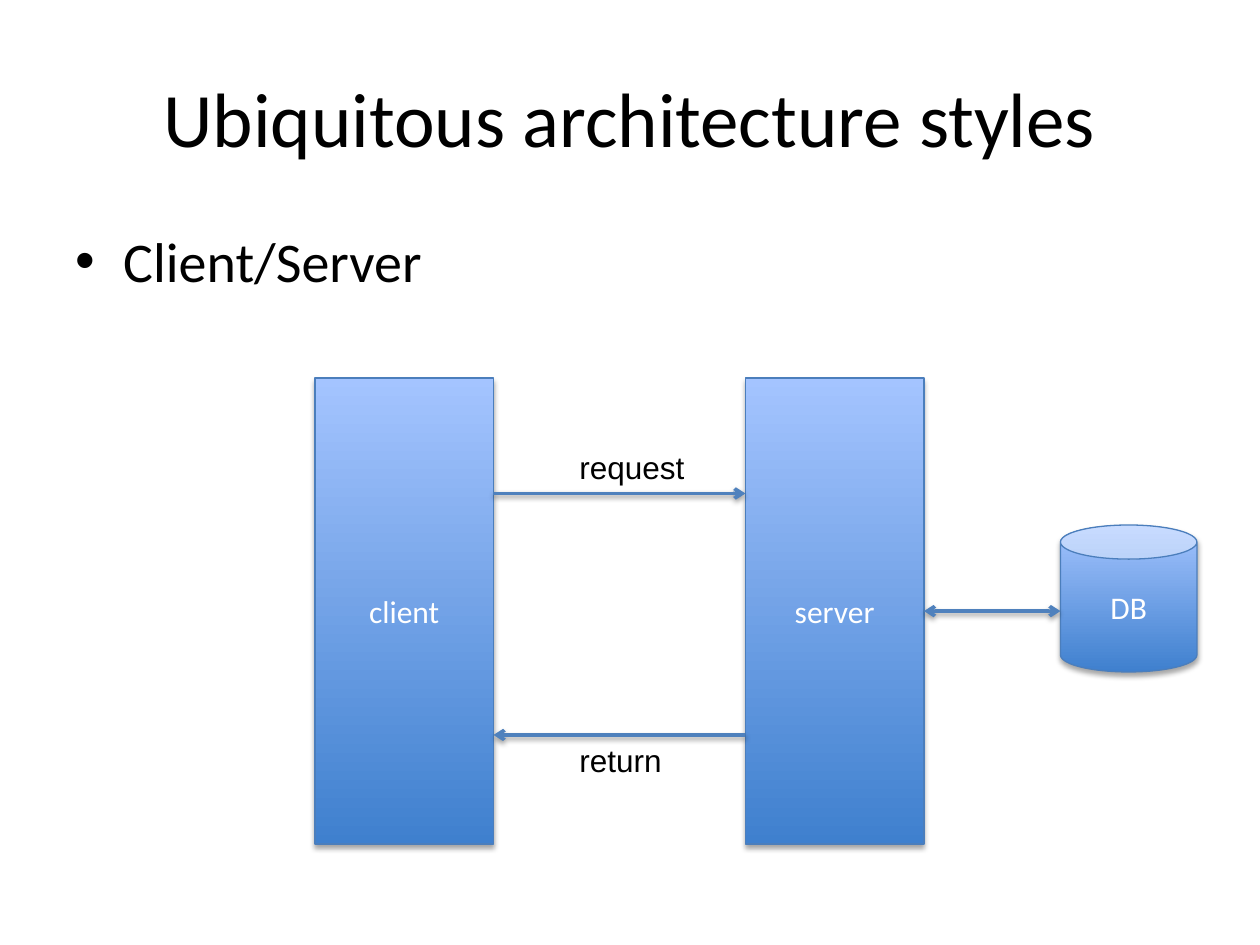
from dataclasses import dataclass

from lxml.etree import SubElement
from pptx import Presentation
from pptx.dml.color import RGBColor as RGB
from pptx.enum.shapes import MSO_CONNECTOR as CONNECTOR, MSO_SHAPE as SHAPE
from pptx.enum.text import MSO_ANCHOR as ANCHOR, MSO_AUTO_SIZE as AUTO_SIZE, PP_ALIGN as ALIGN
from pptx.oxml.ns import qn
from pptx.util import Inches, Pt


@dataclass(frozen=True)
class Theme:
    text: RGB = RGB(0x00, 0x00, 0x00)
    node_text: RGB = RGB(0xFF, 0xFF, 0xFF)
    node_bottom: RGB = RGB(0x3F, 0x80, 0xCE)
    node_top: RGB = RGB(0xA4, 0xC4, 0xFF)
    node_line: RGB = RGB(0x4B, 0x7E, 0xBC)
    arrow: RGB = RGB(0x4F, 0x81, 0xBD)
    font: str = "Calibri"
    label_font: str = "Arial"
    title_size: int = 44
    body_size: int = 32
    node_size: int = 18


THEME = Theme()
CELL = Inches(1) // 12  # the slide is 120 columns by 90 rows

NODE_TOP, NODE_HEIGHT, NODE_WIDTH = 36, 44.4, 17
CLIENT_COL, SERVER_COL, DB_COL = 30, 71, 101
REQUEST_ROW, RETURN_ROW = 47, 70
LABEL_COL = 54


def grid(*cells):
    return [round(c * CELL) for c in cells]


def style_text(p, size, color=THEME.text, font=THEME.font, align=ALIGN.LEFT):
    p.alignment = align
    p.font.name = font
    p.font.size = Pt(size)
    p.font.color.rgb = color


def add_shadow(effects, opacity, distance):
    """Put a soft downward shadow into an empty a:effectLst."""
    shadow = SubElement(effects, qn("a:outerShdw"), blurRad=str(Pt(3.1)),
                        dist=str(Pt(distance)), dir="5400000", rotWithShape="0")
    color = SubElement(shadow, qn("a:srgbClr"), val="000000")
    SubElement(color, qn("a:alpha"), val=str(opacity * 1000))


def set_title(s, text):
    title = s.shapes.title
    title.left, title.top, title.width, title.height = grid(6, 3.6, 108, 15)
    tf = title.text_frame
    tf.text = text
    tf.vertical_anchor = ANCHOR.MIDDLE
    style_text(tf.paragraphs[0], THEME.title_size, align=ALIGN.CENTER)


def add_bullet(s, text):
    tf = s.shapes.add_textbox(*grid(6, 21, 108, 59.4)).text_frame
    tf.word_wrap = True
    p = tf.paragraphs[0]
    p.text = text
    style_text(p, THEME.body_size)
    p_pr = p._p.get_or_add_pPr()
    indent = Inches(0.38)
    p_pr.set("marL", str(indent))
    p_pr.set("indent", str(-indent))
    p_pr.insert(0, p_pr.makeelement(qn("a:buFont"), typeface="Arial"))
    p_pr.insert(1, p_pr.makeelement(qn("a:buChar"), char="•"))


def add_node(s, kind, text, *cells):
    sp = s.shapes.add_shape(kind, *grid(*cells))
    sp.fill.gradient()
    sp.fill.gradient_angle = 90
    for stop, color in zip(sp.fill.gradient_stops, (THEME.node_bottom, THEME.node_top)):
        stop.color.rgb = color
    sp.line.color.rgb = THEME.node_line
    sp.line.width = Pt(0.75)
    sp.shadow.inherit = False
    add_shadow(sp._element.spPr.find(qn("a:effectLst")), 35, 1.8)
    tf = sp.text_frame
    tf.text = text
    tf.vertical_anchor = ANCHOR.MIDDLE
    style_text(tf.paragraphs[0], THEME.node_size, THEME.node_text, align=ALIGN.CENTER)
    return sp


def add_arrow(s, start_col, end_col, row, ends=("tailEnd",)):
    line = s.shapes.add_connector(CONNECTOR.STRAIGHT, *grid(start_col, row, end_col, row))
    line.line.color.rgb = THEME.arrow
    line.line.width = Pt(2)
    sp_pr = line._element.spPr
    for end in ends:
        SubElement(sp_pr.find(qn("a:ln")), qn(f"a:{end}"), type="arrow")
    add_shadow(SubElement(sp_pr, qn("a:effectLst")), 38, 1.6)
    return line


def add_label(s, text, row, width):
    tf = s.shapes.add_textbox(*grid(LABEL_COL, row, width, 4.8)).text_frame
    tf.word_wrap = False
    tf.auto_size = AUTO_SIZE.SHAPE_TO_FIT_TEXT
    tf.text = text
    style_text(tf.paragraphs[0], THEME.node_size, font=THEME.label_font)


def main():
    prs = Presentation()
    prs.slide_width, prs.slide_height = grid(120, 90)
    s = prs.slides.add_slide(prs.slide_layouts[5])

    set_title(s, "Ubiquitous architecture styles")
    add_bullet(s, "Client/Server")

    add_node(s, SHAPE.RECTANGLE, "client", CLIENT_COL, NODE_TOP, NODE_WIDTH, NODE_HEIGHT)
    server = add_node(s, SHAPE.RECTANGLE, "server", SERVER_COL, NODE_TOP, NODE_WIDTH, NODE_HEIGHT)
    add_node(s, SHAPE.CAN, "DB", DB_COL, 50, 13, 14)

    client_right = CLIENT_COL + NODE_WIDTH
    add_arrow(s, client_right, SERVER_COL, REQUEST_ROW)
    add_arrow(s, SERVER_COL, client_right, RETURN_ROW)
    query = add_arrow(s, SERVER_COL + NODE_WIDTH, DB_COL, NODE_TOP + NODE_HEIGHT / 2,
                      ends=("headEnd", "tailEnd"))
    query.begin_connect(server, 3)

    add_label(s, "request", REQUEST_ROW - 4.9, 12.5)
    add_label(s, "return", RETURN_ROW, 10.3)
    prs.save("out.pptx")


if __name__ == "__main__":
    main()
